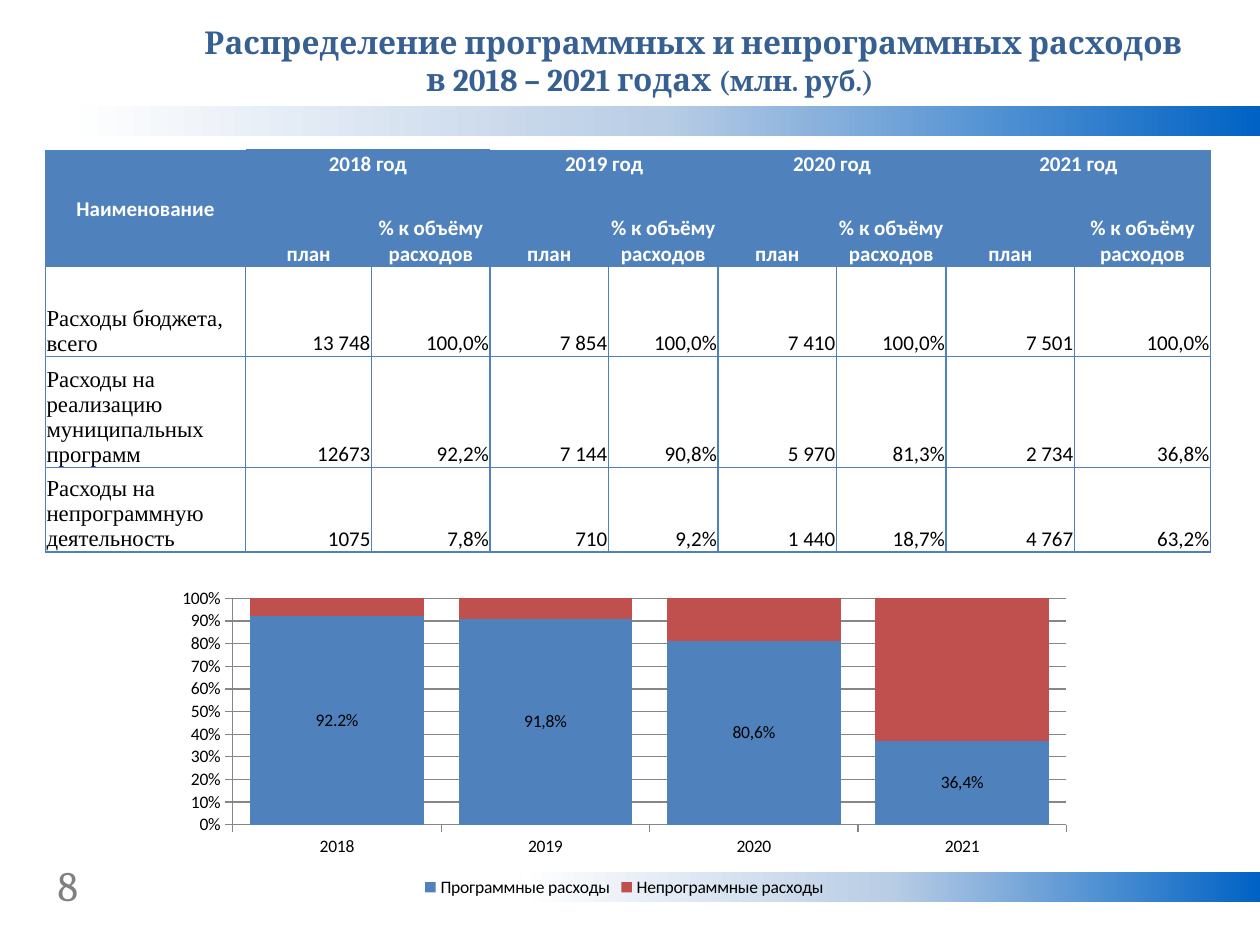
from dataclasses import dataclass

from lxml import etree
from pptx import Presentation
from pptx.chart.data import CategoryChartData
from pptx.dml.color import RGBColor
from pptx.enum.chart import XL_CHART_TYPE, XL_LEGEND_POSITION, XL_TICK_MARK
from pptx.enum.shapes import MSO_SHAPE
from pptx.enum.text import MSO_ANCHOR, MSO_AUTO_SIZE, PP_ALIGN
from pptx.oxml.ns import qn
from pptx.util import Inches, Pt

LEFT, MID, RIGHT = PP_ALIGN.LEFT, PP_ALIGN.CENTER, PP_ALIGN.RIGHT
CENTRE, BOTTOM = MSO_ANCHOR.MIDDLE, MSO_ANCHOR.BOTTOM
STACKED = XL_CHART_TYPE.COLUMN_STACKED_100
RECT, GROW = MSO_SHAPE.RECTANGLE, MSO_AUTO_SIZE.SHAPE_TO_FIT_TEXT
OUTSIDE, BELOW = XL_TICK_MARK.OUTSIDE, XL_LEGEND_POSITION.BOTTOM

COLORS = {
    "deep": "0062C4", "pale": "B9CDE5", "white": "FFFFFF", "black": "000000",
    "blue": "4F81BD", "red": "C0504D", "title": "376092", "gray": "808080", "axis": "868686",
}
YEARS = ["2018", "2019", "2020", "2021"]
WIDTHS = [1.59, 1, 0.94, 0.94, 0.87, 0.94, 0.87, 1.02, 1.08]
HEIGHTS = [0.13, 0.72, 0.71, 0.88, 0.67]
ROWS = [
    ["Расходы бюджета, всего", "13 748", "100,0%", "7 854", "100,0%",
     "7 410", "100,0%", "7 501", "100,0%"],
    ["Расходы на реализацию муниципальных программ", "12673", "92,2%", "7 144", "90,8%",
     "5 970", "81,3%", "2 734", "36,8%"],
    ["Расходы на непрограммную деятельность", "1075", "7,8%", "710", "9,2%",
     "1 440", "18,7%", "4 767", "63,2%"],
]


@dataclass
class Box:
    left: float
    top: float
    width: float
    height: float

    def place(self) -> tuple:
        return tuple(map(Inches, (self.left, self.top, self.width, self.height)))


@dataclass
class Style:
    size: float
    font: str
    color: str
    bold: bool = False


@dataclass
class Series:
    name: str
    values: list[float]
    color: str


HEAD = Style(12, "Calibri", "white", True)
NAME = Style(13, "Times New Roman", "black")
VALUE = Style(12, "Calibri", "black")
TITLE = Style(18, "Cambria", "title", True)
UNIT = Style(16, "Cambria", "title", True)
PAGE = Style(24, "Cambria", "gray")
BANDS = [Box(0.51, 0.84, 9.49, 0.24), Box(4.13, 6.92, 5.87, 0.24)]
SERIES = [
    Series("Программные расходы", [0.922, 0.908, 0.813, 0.368], "blue"),
    Series("Непрограммные расходы", [0.08, 0.09, 0.19, 0.63], "red"),
]
LABELS = ["91,8%", "80,6%", "36,4%"]


def rgb(name: str) -> RGBColor:
    return RGBColor.from_string(COLORS[name])


def dress(font, style: Style) -> None:
    font.size, font.name, font.bold = Pt(style.size), style.font, style.bold
    font.color.rgb = rgb(style.color)


def add_band(slide, box: Box) -> None:
    band = slide.shapes.add_shape(RECT, *box.place())
    band.shadow.inherit = False
    band.line.fill.background()
    band.fill.gradient()
    band.fill.gradient_angle = 180
    stops = band._element.spPr.find(qn("a:gradFill")).find(qn("a:gsLst"))
    for stop in list(stops):
        stops.remove(stop)
    for pos, name in ((0, "deep"), (50, "pale"), (100, "white")):
        stop = etree.SubElement(stops, qn("a:gs"), pos=str(pos * 1000))
        etree.SubElement(stop, qn("a:srgbClr"), val=COLORS[name])


def add_text(slide, box: Box, text: str, style: Style):
    frame = slide.shapes.add_textbox(*box.place()).text_frame
    frame.word_wrap, frame.auto_size = True, GROW
    frame.text = text
    for par in frame.paragraphs:
        dress(par.runs[0].font, style)
    return frame


def add_title(slide) -> None:
    text = "Распределение программных и непрограммных расходов\nв 2018 – 2021 годах "
    first, second = add_text(slide, Box(0.83, 0.13, 8.66, 0.71), text, TITLE).paragraphs
    first.alignment, second.alignment = RIGHT, MID
    unit = second.add_run()
    unit.text = "(млн. руб.)"
    dress(unit.font, UNIT)


def set_lines(cell, sides: str) -> None:
    props = cell._tc.get_or_add_tcPr()
    for side in "LRTB":
        line = etree.SubElement(props, qn(f"a:ln{side}"), w=str(Pt(1)))
        if side in sides:
            fill = etree.SubElement(line, qn("a:solidFill"))
            etree.SubElement(fill, qn("a:srgbClr"), val=COLORS["blue"])
        else:
            etree.SubElement(line, qn("a:noFill"))


def fill_cell(cell, text: str, style: Style, align, anchor, sides: str) -> None:
    set_lines(cell, sides)
    if style is HEAD:
        cell.fill.solid()
        cell.fill.fore_color.rgb = rgb("blue")
    else:
        cell.fill.background()
    cell.margin_left = cell.margin_right = cell.margin_top = Inches(0.01)
    cell.margin_bottom = 0
    cell.vertical_anchor = anchor
    cell.text_frame.text = text
    par = cell.text_frame.paragraphs[0]
    par.alignment = align
    for run in par.runs:
        dress(run.font, style)


def add_grid(slide) -> None:
    box = Box(0.36, 1.19, sum(WIDTHS), sum(HEIGHTS))
    table = slide.shapes.add_table(len(HEIGHTS), len(WIDTHS), *box.place()).table
    table.first_row = table.horz_banding = False
    for col, width in zip(table.columns, WIDTHS):
        col.width = Inches(width)
    for row, height in zip(table.rows, HEIGHTS):
        row.height = Inches(height)
    fill_cell(table.cell(0, 0), "Наименование", HEAD, MID, CENTRE, "")
    fill_cell(table.cell(1, 0), "", HEAD, MID, CENTRE, "")
    table.cell(0, 0).merge(table.cell(1, 0))
    for i, year in enumerate(YEARS):
        col = 2 * i + 1
        sides = "" if i else "T"
        fill_cell(table.cell(0, col), f"{year} год", HEAD, MID, CENTRE, sides)
        fill_cell(table.cell(0, col + 1), "", HEAD, MID, CENTRE, sides)
        table.cell(0, col).merge(table.cell(0, col + 1))
        fill_cell(table.cell(1, col), "план", HEAD, MID, BOTTOM, "")
        fill_cell(table.cell(1, col + 1), "% к объёму расходов", HEAD, MID, BOTTOM, "")
    for r, row in enumerate(ROWS, 2):
        for c, text in enumerate(row):
            style, align = (VALUE, RIGHT) if c else (NAME, LEFT)
            fill_cell(table.cell(r, c), text, style, align, BOTTOM, "LRB" if r == 2 else "LRTB")


def add_bars(slide) -> None:
    data = CategoryChartData(number_format="0.0%")
    data.categories = YEARS
    for item in SERIES:
        data.add_series(item.name, item.values)
    box = Box(1.3, 4.62, 7.31, 2.54)
    chart = slide.shapes.add_chart(STACKED, *box.place(), data).chart
    small = Style(10, "Calibri", "black")
    dress(chart.font, small)
    chart.has_title = False
    chart.has_legend = True
    chart.legend.position, chart.legend.include_in_layout = BELOW, False
    for axis in (chart.category_axis, chart.value_axis):
        axis.major_tick_mark = OUTSIDE
        axis.format.line.color.rgb = rgb("axis")
    scale = chart.value_axis
    scale.major_unit = 0.1
    scale.has_major_gridlines = True
    scale.major_gridlines.format.line.color.rgb = rgb("axis")
    scale.tick_labels.number_format = "0%"
    scale.tick_labels.number_format_is_linked = False
    plot = chart.plots[0]
    plot.gap_width, plot.overlap, plot.vary_by_categories = 20, 100, False
    for series, item in zip(plot.series, SERIES):
        series.format.fill.solid()
        series.format.fill.fore_color.rgb = rgb(item.color)
    labels = plot.series[0].data_labels
    labels.show_value = True
    labels.number_format, labels.number_format_is_linked = "0.0%", False
    for i, text in enumerate(LABELS, 1):
        frame = plot.series[0].points[i].data_label.text_frame
        frame.text = text
        dress(frame.paragraphs[0].runs[0].font, small)


def main() -> None:
    """Build the slide on programme and other spending."""
    deck = Presentation()
    deck.slide_width, deck.slide_height = Inches(10), Inches(7.5)
    slide = deck.slides.add_slide(deck.slide_layouts[6])
    for band in BANDS:
        add_band(slide, band)
    add_text(slide, Box(0.36, 6.77, 0.46, 0.5), "8", PAGE)
    add_grid(slide)
    add_title(slide)
    add_bars(slide)
    deck.save("out.pptx")


if __name__ == "__main__":
    main()
